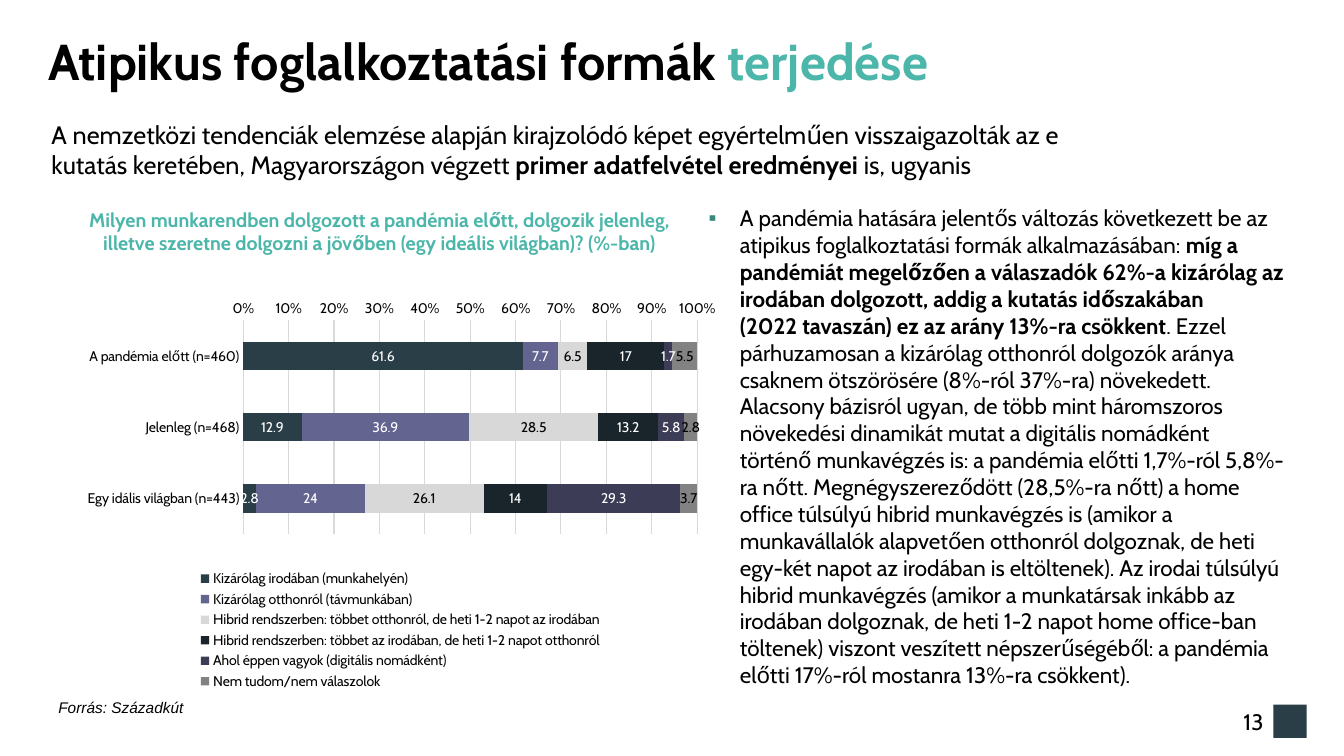
import pptx
import pptx.util
import pptx.chart.data
import pptx.dml.color
import pptx.enum.chart
import pptx.enum.shapes
import pptx.enum.text
import pptx.oxml

Inch, Pt = pptx.util.Inches, pptx.util.Pt
Align, Mid = pptx.enum.text.PP_ALIGN, pptx.enum.text.MSO_ANCHOR.MIDDLE
Kind = pptx.enum.shapes.MSO_SHAPE
WIDE, HIGH = 13.33, 7.5
BLACK, WHITE, TEAL, DARK, GRID = "000000", "FFFFFF", "4BB6A9", "293E47", "D9D9D9"
LEFT, INDENT = 0.38, 0.31

# Content: runs are (text, bold)
TITLE = [("Atipikus foglalkoztatási formák ", True), ("terjedése", True)]
LEAD = [
    ("A nemzetközi tendenciák elemzése alapján kirajzolódó képet egyértelműen "
     "visszaigazolták az e kutatás keretében, Magyarországon végzett ", False),
    ("primer adatfelvétel eredményei ", True),
    ("is, ugyanis", False),
]
BODY = [
    ("A pandémia hatására jelentős változás következett be az atipikus "
     "foglalkoztatási formák alkalmazásában: ", False),
    ("míg a pandémiát megelőzően a válaszadók 62%-a kizárólag az irodában "
     "dolgozott, addig a kutatás időszakában ", True),
    ("\n", True),
    ("(2022 tavaszán) ez az arány 13%-ra csökkent", True),
    (". Ezzel párhuzamosan a kizárólag otthonról dolgozók aránya csaknem "
     "ötszörösére (8%-ról 37%-ra) növekedett. Alacsony bázisról ugyan, de több "
     "mint háromszoros növekedési dinamikát mutat a digitális nomádként történő "
     "munkavégzés is: a pandémia előtti 1,7%-ról 5,8%-ra nőtt. Megnégyszereződött "
     "(28,5%-ra nőtt) a home office túlsúlyú hibrid munkavégzés is (amikor a "
     "munkavállalók alapvetően otthonról dolgoznak, de heti egy-két napot az "
     "irodában is eltöltenek). Az irodai túlsúlyú hibrid munkavégzés (amikor a "
     "munkatársak inkább az irodában dolgoznak, de heti 1-2 napot home office-ban "
     "töltenek) viszont veszített népszerűségéből: a pandémia előtti 17%-ról "
     "mostanra 13%-ra csökkent).", False),
]
ASK = [("Milyen munkarendben dolgozott a pandémia előtt, dolgozik jelenleg, illetve "
        "szeretne dolgozni a jövőben (egy ideális világban)? (%-ban)", True)]
SOURCE = [("Forrás: Századkút", False)]
PAGE = [("13", False)]

CATS = ["A pandémia előtt (n=460)", "Jelenleg (n=468)", "Egy idális világban (n=443)"]
SERIES = [  # name, values, fill, label colour
    ("Kizárólag irodában (munkahelyén)", (61.6, 12.9, 2.8), DARK, WHITE),
    ("Kizárólag otthonról (távmunkában)", (7.7, 36.9, 24), "646491", WHITE),
    ("Hibrid rendszerben: többet otthonról, de heti 1-2 napot az irodában",
     (6.5, 28.5, 26.1), "D8D8D8", BLACK),
    ("Hibrid rendszerben: többet az irodában, de heti 1-2 napot otthonról",
     (17, 13.2, 14), "19252B", WHITE),
    ("Ahol éppen vagyok (digitális nomádként)", (1.7, 5.8, 29.3), "3C3C57", WHITE),
    ("Nem tudom/nem válaszolok", (5.5, 2.8, 3.7), "828282", BLACK),
]
PLOT = (0.288, 0.088, 0.671, 0.523)
LEGEND = (0.2, 0.69, 0.64, 0.31)


def paint(part, tint):
    """Give a fill or a line one solid colour."""
    part.fill.solid()
    part.fill.fore_color.rgb = pptx.dml.color.RGBColor.from_string(tint)


def style(font, size, tint=BLACK, name="Cabin"):
    font.size, font.name = Pt(size), name
    font.color.rgb = pptx.dml.color.RGBColor.from_string(tint)


def write(shape, runs, size, tint=BLACK, name="Cabin", align=Align.LEFT):
    """Fill a shape with one paragraph of runs."""
    shape.text_frame.word_wrap = True
    para = shape.text_frame.paragraphs[0]
    para.alignment = align
    for text, bold in runs:
        if text == "\n":
            para.add_line_break()
            continue
        run = para.add_run()
        run.text = text
        style(run.font, size, tint, name)
        run.font.bold = bold
    return para


def box(slide, spot):
    return slide.shapes.add_textbox(*map(Inch, spot))


def place(owner, index, spot, inner=False):
    """Fix the place of a chart part, in shares of the chart."""
    for old in owner.xpath("c:layout"):
        owner.remove(old)
    tags = [("layoutTarget", "inner")] if inner else []
    tags += [("xMode", "edge"), ("yMode", "edge"), *zip("xywh", spot)]
    items = "".join(f'<c:{tag} val="{val}"/>' for tag, val in tags)
    space = "http://schemas.openxmlformats.org/drawingml/2006/chart"
    owner.insert(index, pptx.oxml.parse_xml(
        f'<c:layout xmlns:c="{space}"><c:manualLayout>{items}</c:manualLayout></c:layout>'))


def bullet(para, mark, tint):
    props = para._p.get_or_add_pPr()
    props.set("marL", str(Inch(INDENT)))
    props.set("indent", str(-Inch(INDENT)))
    space = 'xmlns:a="http://schemas.openxmlformats.org/drawingml/2006/main"'
    for item in (f'<a:buClr {space}><a:srgbClr val="{tint}"/></a:buClr>',
                 f'<a:buFont {space} typeface="Arial"/>',
                 f'<a:buChar {space} char="{mark}"/>'):
        props.append(pptx.oxml.parse_xml(item))


def draw_chart(slide, spot):
    data = pptx.chart.data.CategoryChartData()
    data.categories = CATS
    for name, vals, *_ in SERIES:
        data.add_series(name, vals)
    enum = pptx.enum.chart
    chart = slide.shapes.add_chart(
        enum.XL_CHART_TYPE.BAR_STACKED_100, *map(Inch, spot), data).chart
    style(chart.font, 10)
    chart.has_title = False

    # Bars and labels
    plot = chart.plots[0]
    plot.gap_width, plot.overlap, plot.vary_by_categories = 150, 100, False
    for series, (_, _, fill, ink) in zip(plot.series, SERIES):
        paint(series.format, fill)
        labels = series.data_labels
        labels.show_value = True
        labels.position = enum.XL_LABEL_POSITION.CENTER
        style(labels.font, 10, ink)

    # Axes
    cat, val = chart.category_axis, chart.value_axis
    for axis in (cat, val):
        axis.major_tick_mark = axis.minor_tick_mark = enum.XL_TICK_MARK.NONE
    cat.reverse_order = True
    cat.has_major_gridlines, val.has_major_gridlines = False, True
    for line in (cat.format.line, val.major_gridlines.format.line):
        paint(line, GRID)
        line.width = Pt(0.75)
    val.format.line.fill.background()
    val.minimum_scale, val.maximum_scale, val.major_unit = 0, 1, 0.1
    val.tick_labels.number_format = "0%"
    val.tick_labels.number_format_is_linked = False

    # Legend and layout
    chart.has_legend = True
    legend = chart.legend
    legend.position = enum.XL_LEGEND_POSITION.BOTTOM
    legend.include_in_layout = False
    style(legend.font, 10)
    place(legend._element, 1, LEGEND)
    place(chart._chartSpace.chart.plotArea, 0, PLOT, inner=True)


def main():
    deck = pptx.Presentation()
    deck.slide_width, deck.slide_height = Inch(WIDE), Inch(HIGH)
    slide = deck.slides.add_slide(deck.slide_layouts[6])

    # Page number and its square
    side, foot, edge = 0.33, 6.99, 12.63
    square = slide.shapes.add_shape(Kind.RECTANGLE, *map(Inch, (edge, foot, side, side)))
    square.shadow.inherit = False
    paint(square, DARK)
    square.line.fill.background()
    page = box(slide, (edge - 0.74, foot, 0.74, side))
    page.text_frame.vertical_anchor = Mid
    write(page, PAGE, 16, align=Align.RIGHT)

    # Title and lead
    title = write(box(slide, (LEFT, 0.32, 9.71, 0.67)), TITLE, 36)
    title.line_spacing = 0.9
    style(title.runs[1].font, 36, TEAL)
    lead = slide.shapes.add_shape(
        Kind.ROUNDED_RECTANGLE, *map(Inch, (LEFT, 1.15, 10.26, 0.67)))
    lead.shadow.inherit = False
    lead.fill.background()
    lead.line.fill.background()
    lead.text_frame.vertical_anchor = Mid
    write(lead, LEAD, 18)

    # Chart column
    write(box(slide, (0.6, 2.01, 6.33, 0.57)), ASK, 14, TEAL, align=Align.CENTER)
    draw_chart(slide, (0.48, 2.82, 6.71, 4.06))
    source = write(box(slide, (0.48, 6.88, 1.57, 0.29)), SOURCE, 11, name="Arial")
    source.runs[0].font.italic = True

    # Text column
    body = write(box(slide, (6.93, 1.98, 5.92, 4.69)), BODY, 16)
    bullet(body, "▪", "38897F")

    deck.save("out.pptx")


if __name__ == "__main__":
    main()
